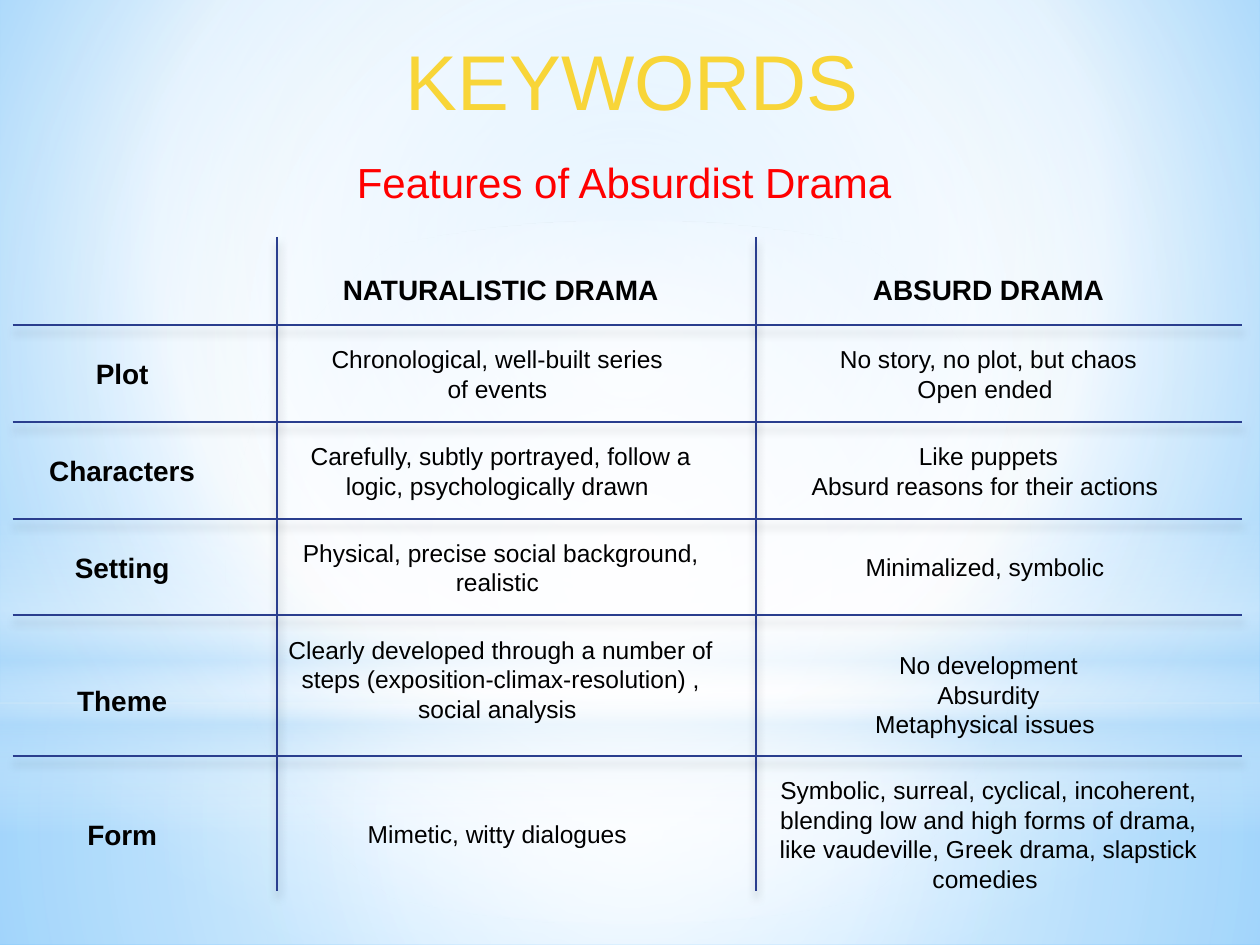
from lxml.etree import SubElement
from pptx import Presentation
from pptx.dml.color import RGBColor
from pptx.enum.shapes import MSO_CONNECTOR as Connector, MSO_SHAPE as Shape
from pptx.enum.text import MSO_ANCHOR as Anchor, PP_ALIGN as Align
from pptx.oxml.ns import qn
from pptx.util import Inches, Pt

# Content: label and cells are each (lines, visible line count, shift from the row centre)
TITLE = "KEYWORDS"
SUBTITLE = "Features of Absurdist Drama "
HEADERS = ["NATURALISTIC DRAMA", "ABSURD DRAMA"]
ROWS = [
    (("Plot", 0),
     (["Chronological, well-built series ", "of events "], 2, 0),
     (["No story, no plot, but chaos", "Open ended "], 2, 0)),
    (("Characters", 0),
     (["Carefully, subtly portrayed, follow a logic, psychologically drawn "], 2, 0),
     (["Like puppets", "Absurd reasons for their actions "], 2, 0)),
    (("Setting", 0),
     (["Physical, precise social background, realistic "], 2, 0),
     (["Minimalized, symbolic "], 1, 0)),
    (("Theme", 0.12),
     (["Clearly developed through a number of steps "
       "(exposition-climax-resolution) , social analysis "], 3, -0.05),
     (["No development", "Absurdity", "Metaphysical issues "], 3, 0.07)),
    (("Form", 0),
     (["Mimetic, witty dialogues "], 1, 0),
     (["Symbolic, surreal, cyclical, incoherent, blending low and high forms of drama, "
       "like vaudeville, Greek drama, slapstick comedies "], 4, 0)),
]

# Style and grid, in inches
COLORS = {"title": "F8D538", "subtitle": "FF0000", "text": "000000", "rule": "2A3E8E",
          "white": "FFFFFF", "pale": "B4DCFA", "sky": "9ED5FF", "deep": "5BB9FF"}
FONT = "Arial"
WIDTH, HEIGHT = 10, 7.5
LEFT, RIGHT, TOP, BOTTOM = 0.1, 9.86, 1.88, 7.07
COLUMN_RULES = [2.2, 6]
ROW_RULES = [2.58, 3.35, 4.12, 4.88, 6]
LABEL_CENTER, CELL_CENTERS = 0.97, [3.975, 7.845]
LABEL_WIDTH, CELL_WIDTH = 1.37, 3.61
HEADER_CENTER, LAST_ROW_CENTER = 2.3, 6.62
LINE_HEIGHT, INSETS = 0.235, 0.1

# Gradients: (position %, colour, opacity %), then the focus rectangle or an angle
CENTER = (50, 50, 50, 50)
BACKDROP = ([(0, "sky", 100), (60, "white", 100), (100, "deep", 100)], (20, 10, 20, 60))
LAYERS = [
    (Shape.RECTANGLE, (0, 5.58, 10, 1.92),
     [(0, "white", 91), (37, "white", 76), (100, "pale", 79)], CENTER),
    (Shape.RECTANGLE, (0, 0, 10, 5.58),
     [(0, "white", 89), (48, "white", 62), (100, "pale", 79)], CENTER),
    (Shape.RECTANGLE, (0, 4.12, 10, 2.5),
     [(0, "white", 0), (29, "white", 30), (45, "pale", 40), (55, "white", 26),
      (65, "pale", 60), (100, "white", 0)], 90),
    (Shape.OVAL, (0, 1.75, 10, 5.58), [(0, "white", 100), (56, "white", 0)], CENTER),
]


def add_color(parent, name, opacity):
    color = SubElement(parent, qn("a:srgbClr"), val=COLORS[name])
    if opacity < 100:
        SubElement(color, qn("a:alpha"), val=str(opacity * 1000))


def paint_gradient(fill, owner, stops, direction):
    fill.gradient()
    gradient = owner.xpath(".//a:gradFill")[0]
    for child in list(gradient):
        gradient.remove(child)
    stop_list = SubElement(gradient, qn("a:gsLst"))
    for position, name, opacity in stops:
        stop = SubElement(stop_list, qn("a:gs"), pos=str(position * 1000))
        add_color(stop, name, opacity)
    if isinstance(direction, tuple):
        shade = SubElement(gradient, qn("a:path"), {"path": "circle"})
        sides = {side: str(share * 1000) for side, share in zip("ltrb", direction)}
        SubElement(shade, qn("a:fillToRect"), sides)
    else:
        SubElement(gradient, qn("a:lin"), ang=str(direction * 60000), scaled="0")


def add_rule(page, x1, y1, x2, y2):
    rule = page.shapes.add_connector(Connector.STRAIGHT, *map(Inches, (x1, y1, x2, y2)))
    rule.line.color.rgb = RGBColor.from_string(COLORS["rule"])
    rule.line.width = Pt(1.25)
    effects = SubElement(rule._element.spPr, qn("a:effectLst"))
    shadow = SubElement(effects, qn("a:outerShdw"), blurRad=str(Pt(5)), dist=str(Pt(4)),
                        dir=str(90 * 60000), algn="ctr", rotWithShape="0")
    add_color(shadow, "text", 20)


def add_text(page, lines, center_x, center_y, width, height, size,
             color="text", bold=False, wrap=True):
    box = page.shapes.add_textbox(*map(Inches, (center_x - width / 2, center_y - height / 2,
                                                width, height)))
    frame = box.text_frame
    frame.word_wrap = wrap
    frame.vertical_anchor = Anchor.MIDDLE
    for index, line in enumerate(lines):
        para = frame.add_paragraph() if index else frame.paragraphs[0]
        para.text = line
        para.alignment = Align.CENTER
        para.font.name, para.font.size, para.font.bold = FONT, Pt(size), bold
        para.font.color.rgb = RGBColor.from_string(COLORS[color])
    return frame


deck = Presentation()
deck.slide_width, deck.slide_height = Inches(WIDTH), Inches(HEIGHT)
page = deck.slides.add_slide(deck.slide_layouts[6])

# Background and its soft light layers
paint_gradient(page.background.fill, page._element, *BACKDROP)
for kind, place, stops, direction in LAYERS:
    layer = page.shapes.add_shape(kind, *map(Inches, place))
    layer.shadow.inherit = False
    layer.line.fill.background()
    paint_gradient(layer.fill, layer._element, stops, direction)

# Headings
heading = add_text(page, [TITLE], 5.02, 0.56, 4.48, 0.82, 44.4, "title")
heading.vertical_anchor = Anchor.TOP
heading.margin_top, heading.margin_bottom = Inches(0.11), 0
add_text(page, [SUBTITLE], WIDTH / 2, 1.44, 4.58, 0.5, 24, "subtitle", wrap=False)

# Grid rules
for x in COLUMN_RULES:
    add_rule(page, x, TOP, x, BOTTOM)
for y in ROW_RULES:
    add_rule(page, LEFT, y, RIGHT, y)

# Column headers, row labels and cells
for header, center_x, width in zip(HEADERS, CELL_CENTERS, (2.73, 2.05)):
    add_text(page, [header], center_x, HEADER_CENTER, width, 0.37, 16, bold=True, wrap=False)

row_centers = [(a + b) / 2 for a, b in zip(ROW_RULES, ROW_RULES[1:])] + [LAST_ROW_CENTER]
for ((label, label_shift), *cells), center_y in zip(ROWS, row_centers):
    add_text(page, [label], LABEL_CENTER, center_y + label_shift, LABEL_WIDTH, 0.37, 16,
             bold=True, wrap=False)
    for (lines, count, shift), center_x in zip(cells, CELL_CENTERS):
        add_text(page, lines, center_x, center_y + shift, CELL_WIDTH,
                 count * LINE_HEIGHT + INSETS, 14)

deck.save("out.pptx")
